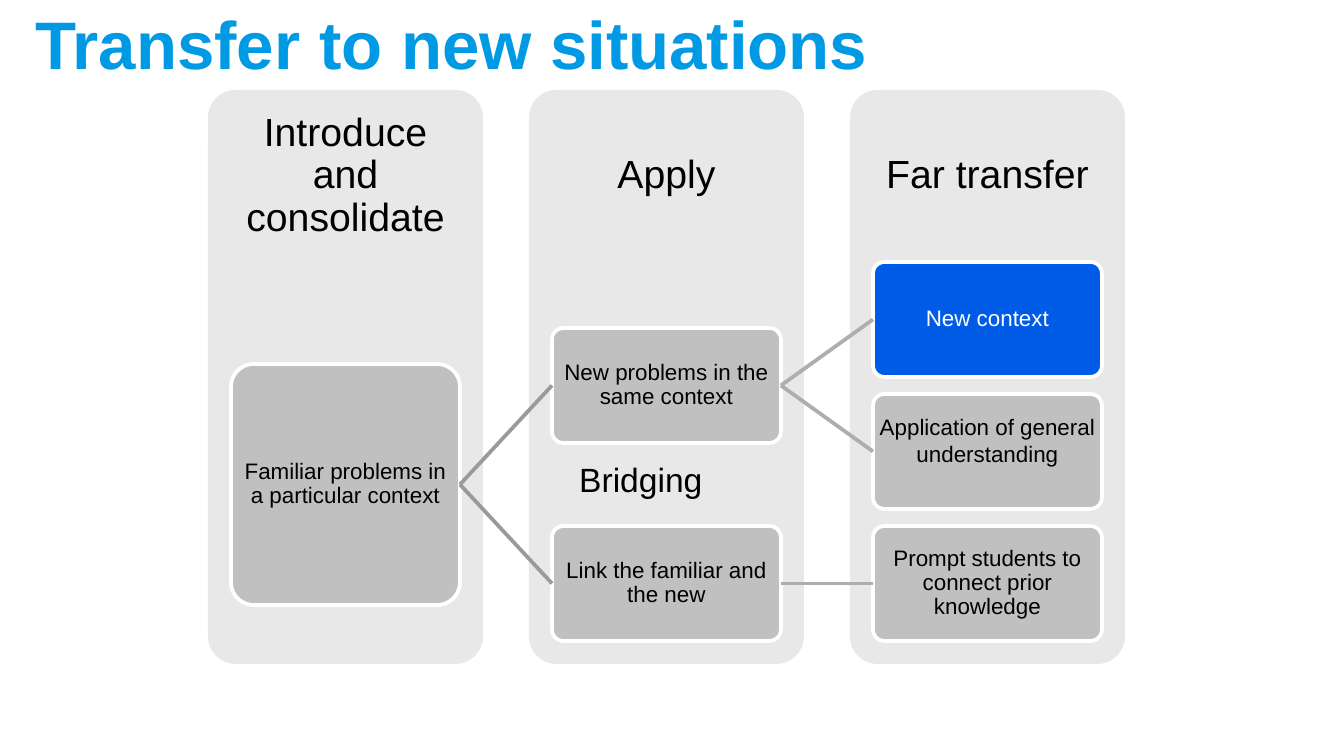
from dataclasses import dataclass

import pptx
import pptx.dml.color
import pptx.enum.shapes
import pptx.enum.text
import pptx.oxml.ns
import pptx.util
from lxml import etree
from pptx.shapes.autoshape import Shape
from pptx.slide import Slide

SCALE = 914400 / 134.4
FONT = "Arial"
COLORS = {
    "title": "0099E3",
    "column": "E8E8E8",
    "node": "C0C0C0",
    "highlight": "005CE7",
    "white": "FFFFFF",
    "black": "000000",
    "first_link": "9A9A9A",
    "second_link": "AEAEAE",
}

COLUMN_LEFT, COLUMN_TOP = 208, 90
COLUMN_WIDTH, COLUMN_HEIGHT = 275, 574
COLUMN_PITCH = 321
HEADER_HEIGHT = 172
NODE_INSET = 23
NODE_WIDTH = COLUMN_WIDTH - 2 * NODE_INSET
NODE_HEIGHT = 115
NODE_TOP, NODE_PITCH = 262, 132

HEADERS = ["Introduce and consolidate", "Apply", "Far transfer"]


@dataclass
class Node:
    key: str
    column: int
    row: float
    text: str
    height: int = NODE_HEIGHT
    fill: str = "node"
    color: str = "black"
    spacing: float = 0.9
    bottom: int = 1


@dataclass
class Link:
    start: str
    end: str
    color: str


NODES = [
    Node("familiar", 0, 1.25, "Familiar problems in a particular context", height=NODE_HEIGHT + 126),
    Node("same", 1, 0.5, "New problems in the same context"),
    Node("bridge", 1, 2, "Link the familiar and the new"),
    Node("new", 2, 0, "New context", fill="highlight", color="white"),
    Node("general", 2, 1, "Application of general understanding", spacing=1.0, bottom=24),
    Node("prompt", 2, 2, "Prompt students to connect prior knowledge"),
]
LINKS = [
    Link("familiar", "same", "first_link"),
    Link("familiar", "bridge", "first_link"),
    Link("same", "new", "second_link"),
    Link("same", "general", "second_link"),
    Link("bridge", "prompt", "second_link"),
]


def px(value: float) -> int:
    return round(value * SCALE)


def rgb(name: str) -> pptx.dml.color.RGBColor:
    return pptx.dml.color.RGBColor.from_string(COLORS[name])


def column_x(column: int) -> int:
    return COLUMN_LEFT + column * COLUMN_PITCH


def write(shape: Shape, text: str, size: int, color: str, centered: bool = True, spacing: float = 1.0) -> None:
    frame = shape.text_frame
    frame.word_wrap = True
    frame.auto_size = pptx.enum.text.MSO_AUTO_SIZE.NONE
    para = frame.paragraphs[0]
    para.text = text
    align = pptx.enum.text.PP_ALIGN
    para.alignment = align.CENTER if centered else align.LEFT
    para.line_spacing = spacing
    para.font.name = FONT
    para.font.size = pptx.util.Pt(size)
    para.font.color.rgb = rgb(color)


def set_margins(shape: Shape, side: int, bottom: int) -> None:
    frame = shape.text_frame
    frame.margin_left = frame.margin_right = frame.margin_top = px(side)
    frame.margin_bottom = px(bottom)
    frame.vertical_anchor = pptx.enum.text.MSO_ANCHOR.MIDDLE


def add_rounded(page: Slide, left: int, top: int, width: int, height: int, fill: str) -> Shape:
    box = page.shapes.add_shape(
        pptx.enum.shapes.MSO_SHAPE.ROUNDED_RECTANGLE, px(left), px(top), px(width), px(height)
    )
    box.adjustments[0] = 0.1
    box.shadow.inherit = False
    box.fill.solid()
    box.fill.fore_color.rgb = rgb(fill)
    box.line.fill.background()
    return box


def add_column(page: Slide, column: int, header: str) -> None:
    left = column_x(column)
    add_rounded(page, left, COLUMN_TOP, COLUMN_WIDTH, COLUMN_HEIGHT, "column")
    box = page.shapes.add_textbox(px(left), px(COLUMN_TOP), px(COLUMN_WIDTH), px(HEADER_HEIGHT))
    write(box, header, 21, "black", spacing=0.9)
    set_margins(box, 21, 21)


def add_node(page: Slide, node: Node) -> Shape:
    center = NODE_TOP + node.row * NODE_PITCH + NODE_HEIGHT / 2
    if node.height == NODE_HEIGHT:
        top = round(center - NODE_HEIGHT / 2)
    else:
        top = round(center - node.height / 2)
    box = add_rounded(page, column_x(node.column) + NODE_INSET, top, NODE_WIDTH, node.height, node.fill)
    box.line.color.rgb = rgb("white")
    box.line.width = pptx.util.Pt(2)
    write(box, node.text, 12, node.color, spacing=node.spacing)
    set_margins(box, 1, node.bottom)
    return box


def add_link(page: Slide, start: Shape, end: Shape, color: str) -> None:
    line = page.shapes.add_connector(pptx.enum.shapes.MSO_CONNECTOR.STRAIGHT, 0, 0, 0, 0)
    line.begin_connect(start, 3)
    line.end_connect(end, 1)
    line.line.color.rgb = rgb(color)
    line.line.width = pptx.util.Pt(2)
    properties = line._element.spPr
    etree.SubElement(properties, pptx.oxml.ns.qn("a:effectLst"))


def main() -> None:
    deck = pptx.Presentation()
    deck.slide_width, deck.slide_height = px(1344), px(756)
    page = deck.slides.add_slide(deck.slide_layouts[5])

    title = page.shapes.title
    title.left, title.top, title.width, title.height = px(22), px(15), px(1281), px(56)
    write(title, "Transfer to new situations", 36, "title", centered=False)
    title.text_frame.paragraphs[0].font.bold = True
    title.text_frame.vertical_anchor = pptx.enum.text.MSO_ANCHOR.MIDDLE

    for column, header in enumerate(HEADERS):
        add_column(page, column, header)
    boxes = {node.key: add_node(page, node) for node in NODES}
    for link in LINKS:
        add_link(page, boxes[link.start], boxes[link.end], link.color)

    bridging = page.shapes.add_textbox(px(566), px(452), px(202), px(54))
    write(bridging, "Bridging", 18, "black", centered=False)

    deck.save("out.pptx")


if __name__ == "__main__":
    main()
